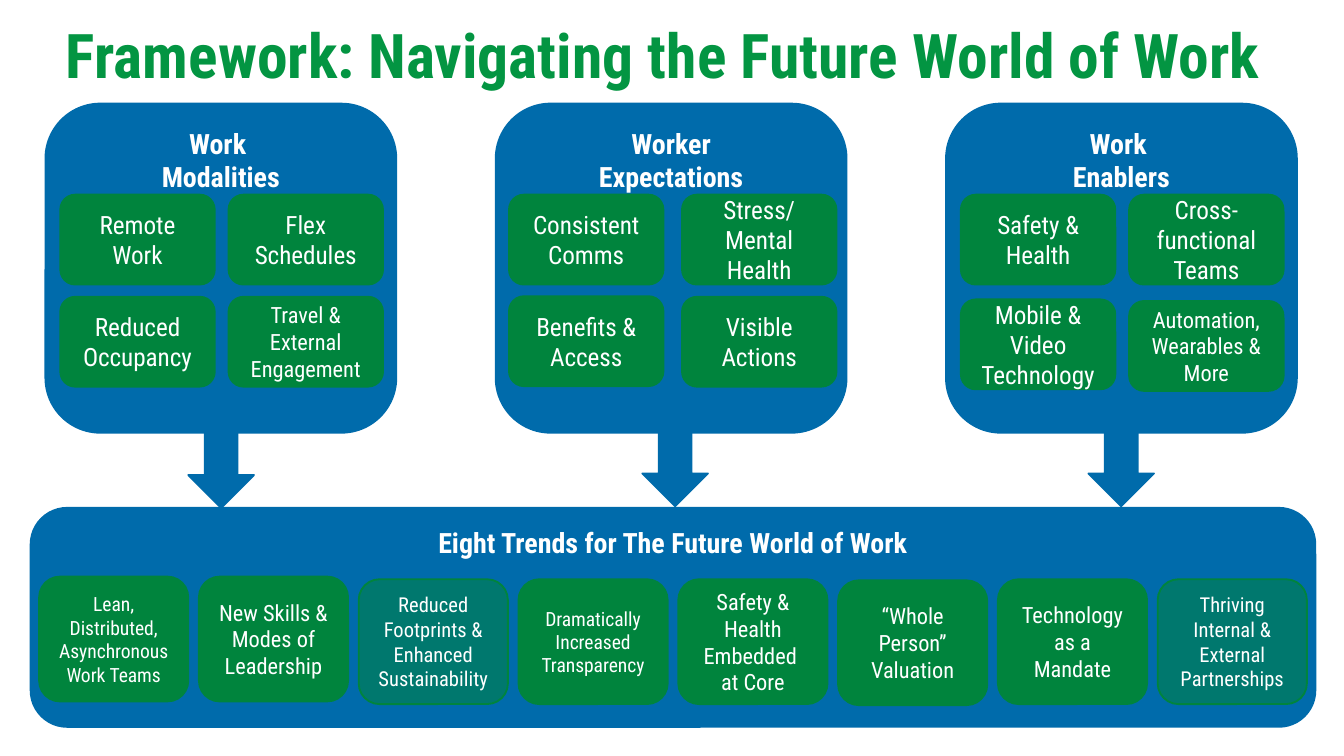
"""Build the slide on navigating the future world of work."""
from dataclasses import dataclass

from lxml import etree
from pptx import Presentation
from pptx.dml.color import RGBColor
from pptx.enum.shapes import MSO_SHAPE
from pptx.enum.text import MSO_ANCHOR, MSO_AUTO_SIZE, PP_ALIGN
from pptx.oxml.ns import qn
from pptx.util import Cm, Pt

ROUND_RECT = MSO_SHAPE.ROUNDED_RECTANGLE
DOWN_ARROW = MSO_SHAPE.DOWN_ARROW
TOP, MIDDLE = MSO_ANCHOR.TOP, MSO_ANCHOR.MIDDLE
CENTER = PP_ALIGN.CENTER
GROW = MSO_AUTO_SIZE.SHAPE_TO_FIT_TEXT


@dataclass(frozen=True)
class Theme:
    font: str = "Roboto Condensed"
    blue: str = "006BAB"
    green: str = "00843D"
    title_green: str = "039542"
    white: str = "FFFFFF"
    title: float = 33
    heading: float = 15
    large: float = 13.5
    medium: float = 12
    small: float = 11
    tiny: float = 10.5
    sheer: int = 55


THEME = Theme()

PANEL_LEFT, PANEL_PITCH = 0.86, 8.51
ROW_TOP = 3.68
PANELS = [
    ("Work \nModalities", (1.14, 4.32), (5.61, 5.61), [
        ("Remote Work", THEME.large), ("Flex Schedules", THEME.large),
        ("Reduced Occupancy", THEME.large),
        ("Travel & External Engagement", THEME.medium)]),
    ("Worker\nExpectations", (9.62, 12.89), (5.6, 5.61), [
        ("Consistent Comms", THEME.large),
        ("Stress/\nMental Health", THEME.large),
        ("Benefits & Access", THEME.large), ("Visible Actions", THEME.large)]),
    ("Work \nEnablers", (18.16, 21.34), (5.66, 5.69), [
        ("Safety & Health", THEME.large),
        ("Cross-functional Teams", THEME.large),
        ("Mobile & Video Technology", THEME.large),
        ("Automation, Wearables & More", THEME.medium)]),
]
ARROWS = [(3.56, 8.18), (12.14, 8.15), (20.57, 8.15)]

TREND_LEFT, TREND_PITCH = 0.74, 3.02
TRENDS = [
    ("Lean, Distributed, Asynchronous Work Teams", THEME.tiny, 10.9, None),
    ("New Skills & Modes of Leadership", THEME.medium, 10.9, None),
    ("Reduced Footprints & Enhanced Sustainability", THEME.small, 10.95,
     THEME.sheer),
    ("Dramatically Increased Transparency", THEME.tiny, 10.95, None),
    ("Safety & Health Embedded \nat Core", THEME.medium, 10.95, None),
    ("“Whole Person” Valuation", THEME.medium, 10.97, None),
    ("Technology as a Mandate", THEME.medium, 10.95, None),
    ("Thriving Internal & External Partnerships", THEME.small, 10.95,
     THEME.sheer),
]


def set_text(sp, text, size, color, bold=False, anchor=TOP):
    tf = sp.text_frame
    tf.word_wrap = True
    tf.vertical_anchor = anchor
    p = tf.paragraphs[0]
    p.text = text
    p.alignment = CENTER
    for r in p.runs:
        r.font.name = THEME.font
        r.font.size = Pt(size)
        r.font.bold = bold
        r.font.color.rgb = RGBColor.from_string(color)


def set_opacity(sp, percent):
    color = sp._element.spPr.find(qn("a:solidFill")).find(qn("a:srgbClr"))
    etree.SubElement(color, qn("a:alpha")).set("val", str(percent * 1000))


def add_block(s, kind, color, left, top, width, height):
    sp = s.shapes.add_shape(kind, Cm(left), Cm(top), Cm(width), Cm(height))
    sp.shadow.inherit = False
    sp.fill.solid()
    sp.fill.fore_color.rgb = RGBColor.from_string(color)
    sp.line.color.rgb = RGBColor.from_string(color)
    sp.line.width = Pt(1)
    return sp


def add_panel(s, text, left, top, width, height):
    sp = add_block(s, ROUND_RECT, THEME.blue, left, top, width, height)
    set_text(sp, text, THEME.heading, THEME.white, bold=True)


def add_tile(s, text, size, left, top, width, height, opacity=None):
    sp = add_block(s, ROUND_RECT, THEME.green, left, top, width, height)
    set_text(sp, text, size, THEME.white, anchor=MIDDLE)
    if opacity is not None:
        set_opacity(sp, opacity)


def add_title(s, text):
    sp = s.shapes.add_textbox(Cm(0.28), Cm(0.2), Cm(24.51), Cm(1.68))
    set_text(sp, text, THEME.title, THEME.title_green, bold=True)
    sp.text_frame.auto_size = GROW


def main():
    prs = Presentation()
    prs.slide_width, prs.slide_height = Cm(25.4), Cm(14.29)
    s = prs.slides.add_slide(prs.slide_layouts[6])

    for i, (heading, columns, second_row, tiles) in enumerate(PANELS):
        add_panel(s, heading, PANEL_LEFT + i * PANEL_PITCH, 1.96, 6.63, 6.22)
        for j, (text, size) in enumerate(tiles):
            row, col = divmod(j, 2)
            top = second_row[col] if row else ROW_TOP
            add_tile(s, text, size, columns[col], top, 2.92, 1.7)

    add_panel(s, "Eight Trends for The Future World of Work",
              0.58, 9.6, 24.28, 4.14)
    for left, top in ARROWS:
        add_block(s, DOWN_ARROW, THEME.blue, left, top, 1.24, 1.42)
    for i, (text, size, top, opacity) in enumerate(TRENDS):
        add_tile(s, text, size, TREND_LEFT + i * TREND_PITCH, top,
                 2.82, 2.36, opacity)

    add_title(s, "Framework: Navigating the Future World of Work")
    prs.save("out.pptx")


if __name__ == "__main__":
    main()
